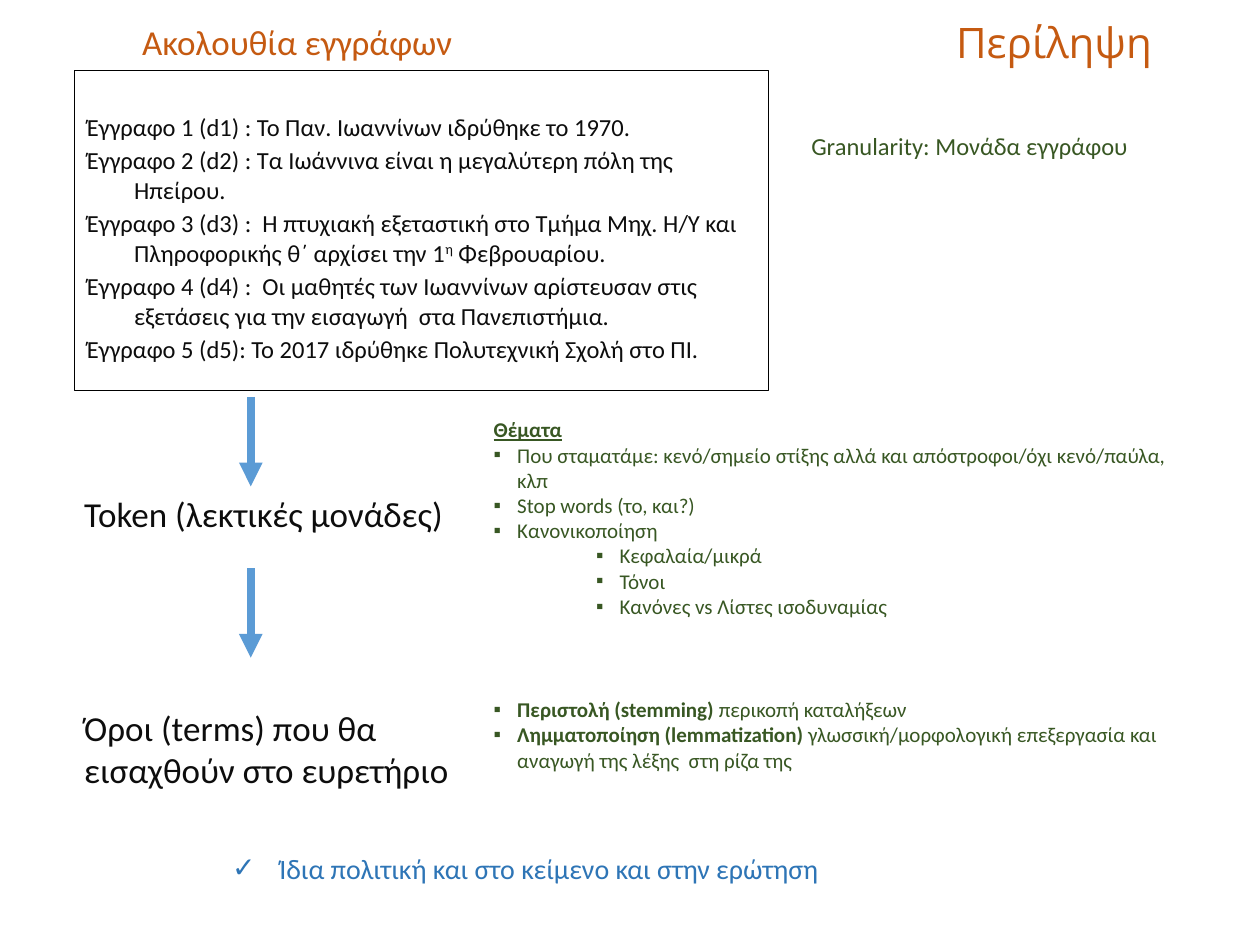
"""Build the summary slide on turning documents into index terms."""
from dataclasses import dataclass

from lxml import etree
from pptx import Presentation
from pptx.dml.color import RGBColor
from pptx.enum.shapes import MSO_CONNECTOR, MSO_SHAPE
from pptx.enum.text import MSO_ANCHOR, PP_ALIGN
from pptx.oxml.ns import qn
from pptx.util import Pt

STRAIGHT = MSO_CONNECTOR.STRAIGHT
RECTANGLE = MSO_SHAPE.RECTANGLE
TOP = MSO_ANCHOR.TOP
LEFT, CENTER = PP_ALIGN.LEFT, PP_ALIGN.CENTER


@dataclass(frozen=True)
class Theme:
    body_font: str = "Calibri"
    title_font: str = "Open Sans"
    heading: RGBColor = RGBColor(0xC5, 0x5A, 0x11)
    ink: RGBColor = RGBColor(0x0D, 0x0D, 0x0D)
    note: RGBColor = RGBColor(0x38, 0x57, 0x23)
    policy: RGBColor = RGBColor(0x2E, 0x75, 0xB6)
    arrow: RGBColor = RGBColor(0x5B, 0x9B, 0xD5)
    border: RGBColor = RGBColor(0, 0, 0)
    title_size: int = 24
    stage_size: int = 20
    policy_size: int = 16
    document_size: int = 14
    topic_size: int = 12


@dataclass(frozen=True)
class Box:
    left: float
    top: float
    width: float
    height: float

    def points(self) -> tuple:
        return Pt(self.left), Pt(self.top), Pt(self.width), Pt(self.height)


@dataclass(frozen=True)
class Style:
    size: int
    color: RGBColor
    font: str = Theme.body_font
    align: PP_ALIGN = LEFT
    space_after: float = 0


@dataclass(frozen=True)
class Span:
    text: str
    bold: bool = False
    superscript: bool = False


@dataclass(frozen=True)
class Line:
    spans: tuple
    margin: float = 0
    hanging: float = 0
    bullet: str = ""
    level: int = 0
    heading: bool = False


THEME = Theme()
STAGE = Style(THEME.stage_size, THEME.ink)
TOPIC = Style(THEME.topic_size, THEME.note)
ARROW_X, ARROW_LENGTH = 143.3, 51.1
ARROW_TOPS = (226.8, 324.7)
DOCUMENTS = (
    (Span("Έγγραφο 1 (d1) : Το Παν. Ιωαννίνων ιδρύθηκε το 1970."),),
    (Span("Έγγραφο 2 (d2) : Τα Ιωάννινα είναι η μεγαλύτερη πόλη της Ηπείρου."),),
    (Span("Έγγραφο 3 (d3) :  Η πτυχιακή εξεταστική στο Τμήμα Μηχ. Η/Υ και Πληροφορικής θ΄ αρχίσει την 1"),
     Span("η", superscript=True), Span(" Φεβρουαρίου.")),
    (Span("Έγγραφο 4 (d4) :  Οι μαθητές των Ιωαννίνων αρίστευσαν στις εξετάσεις για την εισαγωγή  στα Πανεπιστήμια."),),
    (Span("Έγγραφο 5 (d5): Το 2017 ιδρύθηκε Πολυτεχνική Σχολή στο ΠΙ."),),
)


def plain(text: str) -> Line:
    return Line((Span(text),))


def topic(*spans: Span) -> Line:
    return Line(spans, 13.5, 13.5, "▪")


def subtopic(text: str) -> Line:
    return Line((Span(text),), 72, 13.5, "▪", level=1)


def format_paragraph(paragraph, line: Line, style: Style) -> None:
    properties = paragraph._p.get_or_add_pPr()
    if line.margin:
        properties.set("marL", str(Pt(line.margin)))
        properties.set("indent", str(-Pt(line.hanging)))
    if line.bullet:
        etree.SubElement(properties, qn("a:buFont")).set("typeface", "Arial")
        etree.SubElement(properties, qn("a:buChar")).set("char", line.bullet)
    paragraph.level = line.level
    paragraph.alignment = style.align
    paragraph.space_after = Pt(style.space_after)
    font = paragraph.font
    font.name, font.size = style.font, Pt(style.size)
    font.color.rgb = style.color
    if line.heading:
        font.bold = font.underline = True


def write(frame, lines: tuple, style: Style) -> None:
    frame.word_wrap = True
    frame.vertical_anchor = TOP
    for index, line in enumerate(lines):
        paragraph = frame.add_paragraph() if index else frame.paragraphs[0]
        format_paragraph(paragraph, line, style)
        for span in line.spans:
            run = paragraph.add_run()
            run.text = span.text
            if span.bold:
                run.font.bold = True
            if span.superscript:
                run._r.get_or_add_rPr().set("baseline", "30000")


def add_text(slide, box: Box, style: Style, *lines: Line) -> None:
    write(slide.shapes.add_textbox(*box.points()).text_frame, lines, style)


def add_documents(slide, box: Box) -> None:
    collection = slide.shapes.add_shape(RECTANGLE, *box.points())
    collection.shadow.inherit = False
    collection.fill.background()
    collection.line.color.rgb = THEME.border
    collection.line.width = Pt(0.75)
    collection.text_frame.margin_top = Pt(23.5)
    write(collection.text_frame, tuple(Line(spans, 27, 27) for spans in DOCUMENTS),
          Style(THEME.document_size, THEME.ink, space_after=2.4))


def add_arrow(slide, top: float) -> None:
    arrow = slide.shapes.add_connector(
        STRAIGHT, Pt(ARROW_X), Pt(top), Pt(ARROW_X), Pt(top + ARROW_LENGTH))
    arrow.line.color.rgb = THEME.arrow
    arrow.line.width = Pt(4.5)
    etree.SubElement(arrow.line._get_or_add_ln(), qn("a:tailEnd")).set("type", "triangle")
    etree.SubElement(arrow._element.spPr, qn("a:effectLst"))


def main() -> None:
    deck = Presentation()
    deck.slide_width, deck.slide_height = Pt(720), Pt(540)
    slide = deck.slides.add_slide(deck.slide_layouts[6])

    add_documents(slide, Box(42.5, 40.3, 396.7, 182.9))
    add_text(slide, Box(-14.4, 7.9, 368.6, 31.7),
             Style(THEME.stage_size, THEME.heading, align=CENTER), plain("Ακολουθία εγγράφων"))
    add_text(slide, Box(41, 400.3, 226.8, 55.4), STAGE,
             plain("Όροι (terms) που θα εισαχθούν στο ευρετήριο"))
    add_text(slide, Box(41, 277.9, 226.8, 31.7), STAGE, plain("Token (λεκτικές μονάδες)"))
    for top in ARROW_TOPS:
        add_arrow(slide, top)
    add_text(slide, Box(456.5, 71.3, 238.3, 24.5),
             Style(THEME.document_size, THEME.note), plain("Granularity: Μονάδα εγγράφου"))
    add_text(slide, Box(275, 394.6, 402.5, 51.1), TOPIC,
             topic(Span("Περιστολή (stemming) ", bold=True), Span("περικοπή καταλήξεων")),
             topic(Span("Λημματοποίηση (lemmatization) ", bold=True),
                   Span("γλωσσική/μορφολογική επεξεργασία και αναγωγή της λέξης  στη ρίζα της")))
    add_text(slide, Box(275, 234.7, 402.5, 123.8), TOPIC,
             Line((Span("Θέματα"),), heading=True),
             topic(Span("Που σταματάμε: κενό/σημείο στίξης αλλά και απόστροφοι/όχι κενό/παύλα,  κλπ")),
             topic(Span("Stop words (το, και?)")),
             topic(Span("Κανονικοποίηση")),
             subtopic("Κεφαλαία/μικρά"),
             subtopic("Τόνοι"),
             subtopic("Κανόνες vs Λίστες ισοδυναμίας"))
    add_text(slide, Box(22.3, 483.1, 555.8, 26.6),
             Style(THEME.policy_size, THEME.policy, align=CENTER),
             Line((Span("Ίδια πολιτική και στο κείμενο και στην ερώτηση"),), 27, 27, "✓"))
    add_text(slide, Box(539.3, 5.8, 153.4, 36),
             Style(THEME.title_size, THEME.heading, THEME.title_font), plain("Περίληψη"))
    deck.save("out.pptx")


if __name__ == "__main__":
    main()
